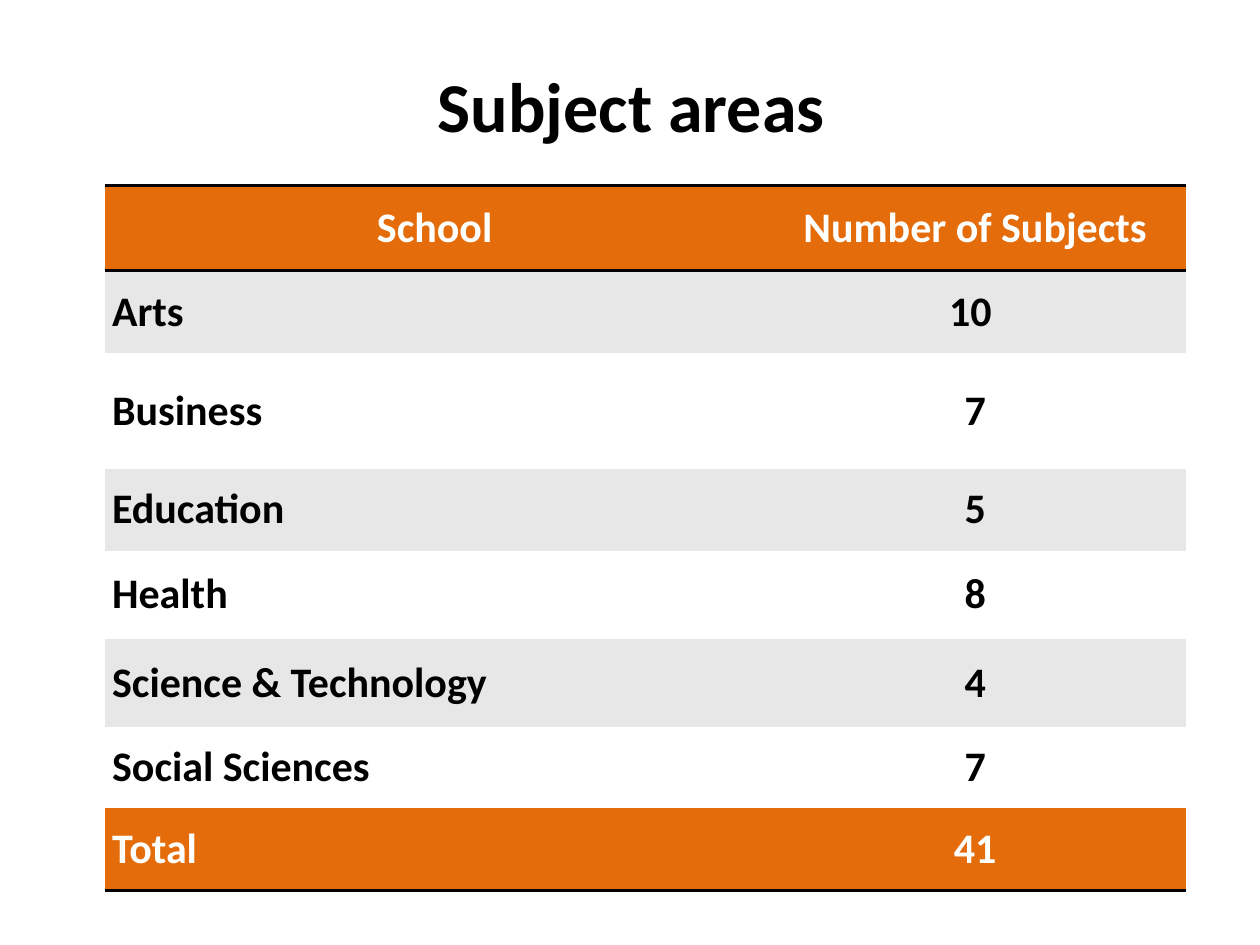
from lxml import etree
from pptx import Presentation, util as u
from pptx.dml.color import RGBColor
from pptx.enum import text
from pptx.oxml.ns import qn

TITLE = "Subject areas"
ROWS = [  # school, number of subjects, row height in inches
    ("School", "Number of Subjects", 0.68),
    ("Arts", "10 ", 0.65),
    ("Business", "7", 0.92),
    ("Education", "5", 0.65),
    ("Health", "8", 0.7),
    ("Science & Technology", "4", 0.7),
    ("Social Sciences", "7", 0.64),
    ("Total", "41", 0.66),
]
COLUMN_WIDTHS = (5.24, 3.34)
TABLE_LEFT, TABLE_TOP = 0.83, 1.47
COLORS = {"accent": "E46C0A", "band": "E7E7E7", "plain": "FFFFFF",
          "ink": "000000", "light": "FFFFFF"}
FONT = "Calibri"
NO_STYLE_NO_GRID = "{2D5ABB26-0587-4C30-8999-92F81FD0307C}"
LAST = len(ROWS) - 1


def color(name):
    return RGBColor.from_string(COLORS[name])


def write(text_frame, content, size, color_name, alignment):
    text_frame.text = content
    paragraph = text_frame.paragraphs[0]
    paragraph.alignment = alignment
    font = paragraph.runs[0].font
    font.name, font.size, font.bold = FONT, u.Pt(size), True
    font.color.rgb = color(color_name)


def add_border(cell, side, points=2):
    """Rule one side of a cell; call before the fill, as the schema orders it."""
    properties = cell._tc.get_or_add_tcPr()
    line = etree.SubElement(properties, qn(f"a:ln{side}"), w=str(u.Pt(points)))
    fill = etree.SubElement(line, qn("a:solidFill"))
    etree.SubElement(fill, qn("a:srgbClr"), val=COLORS["ink"])


def format_cell(cell, content, row, column):
    accented = row in (0, LAST)
    centred = row == 0 or column == 1
    for side in {0: "TB", LAST: "B"}.get(row, ""):
        add_border(cell, side)
    cell.fill.solid()
    cell.fill.fore_color.rgb = color(
        "accent" if accented else "band" if row % 2 else "plain")
    cell.margin_left = cell.margin_right = u.Inches(0.06)
    cell.margin_top = cell.margin_bottom = u.Inches(0.03)
    cell.vertical_anchor = text.MSO_ANCHOR.MIDDLE
    write(cell.text_frame, content, 24, "light" if accented else "ink",
          text.PP_ALIGN.CENTER if centred else text.PP_ALIGN.LEFT)


def add_subject_table(slide):
    height = sum(row[-1] for row in ROWS)
    frame = slide.shapes.add_table(
        len(ROWS), len(COLUMN_WIDTHS), u.Inches(TABLE_LEFT),
        u.Inches(TABLE_TOP), u.Inches(sum(COLUMN_WIDTHS)), u.Inches(height))
    table = frame.table
    table._tbl.tblPr.find(qn("a:tableStyleId")).text = NO_STYLE_NO_GRID
    for column, width in zip(table.columns, COLUMN_WIDTHS):
        column.width = u.Inches(width)
    for row, (*contents, row_height) in enumerate(ROWS):
        table.rows[row].height = u.Inches(row_height)
        for column, content in enumerate(contents):
            format_cell(table.cell(row, column), content, row, column)


def add_title(slide):
    box = slide.shapes.add_textbox(
        u.Inches(0.51), u.Inches(0.36), u.Inches(9), u.Inches(0.94))
    box.text_frame.word_wrap = True
    box.text_frame.vertical_anchor = text.MSO_ANCHOR.MIDDLE
    write(box.text_frame, TITLE, 40, "ink", text.PP_ALIGN.CENTER)


def main():
    presentation = Presentation()
    presentation.slide_width = u.Inches(10)
    presentation.slide_height = u.Inches(7.5)
    slide = presentation.slides.add_slide(presentation.slide_layouts[6])
    add_subject_table(slide)
    add_title(slide)
    presentation.save("out.pptx")


if __name__ == "__main__":
    main()
